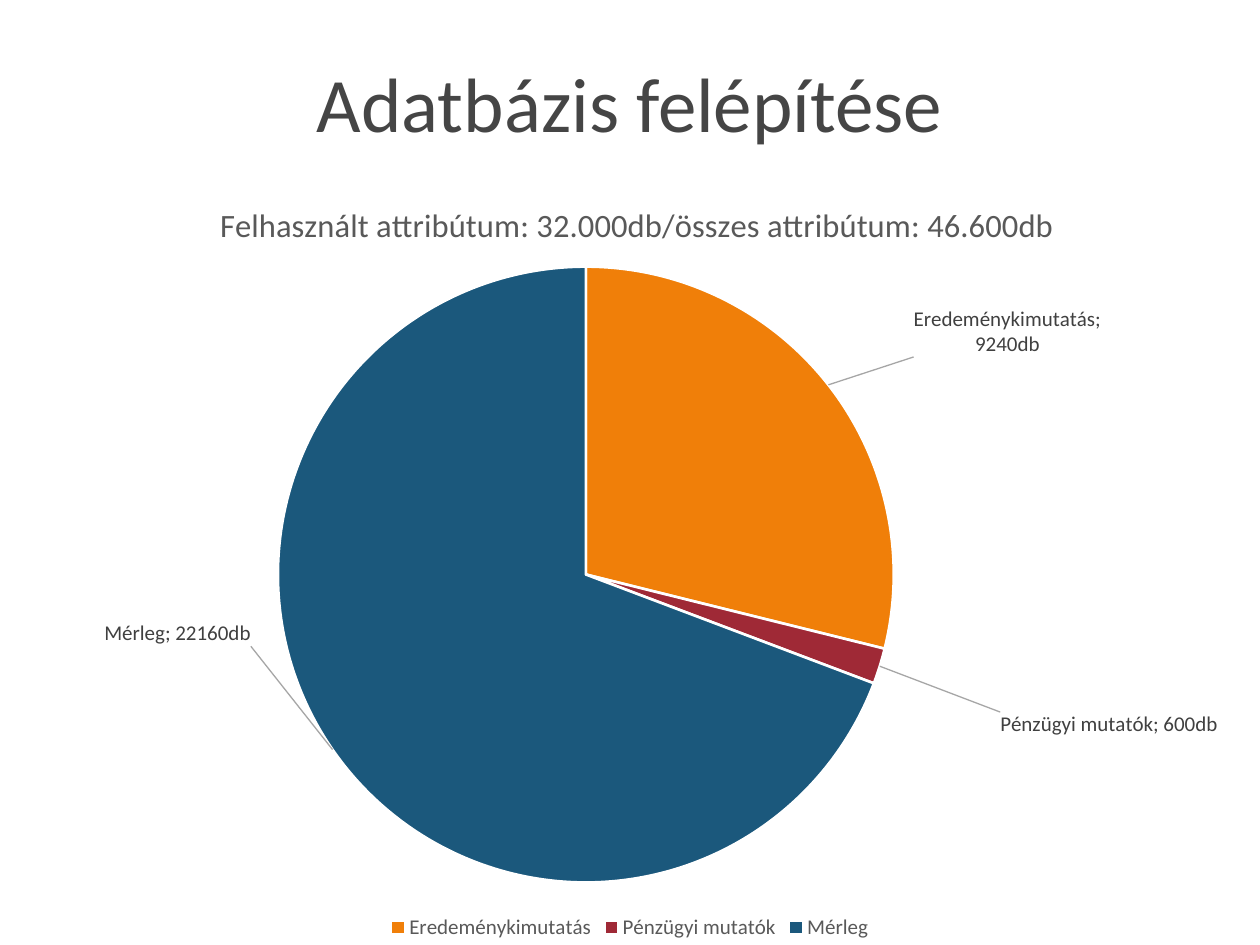
"""Build a slide with a titled pie chart of the database structure."""
from dataclasses import dataclass

import lxml.etree
import pptx
import pptx.chart.data
import pptx.dml.color
import pptx.enum.chart
import pptx.enum.text
import pptx.oxml
import pptx.oxml.ns
import pptx.util

qn = pptx.oxml.ns.qn


@dataclass(frozen=True)
class Theme:
    face: str = "Calibri"
    head: str = "454545"
    soft: str = "595959"
    label: str = "404040"
    line: str = "A6A6A6"
    edge: str = "FFFFFF"
    big: float = 44
    mid: float = 18.6
    small: float = 12


@dataclass(frozen=True)
class Slice:
    name: str
    count: int
    fill: str
    shift: tuple[float, float]


THEME = Theme()
WIDE, HIGH = pptx.util.Inches(10), pptx.util.Inches(7.5)
UNIT = '0"db"'
SLICES = [
    Slice("Eredeménykimutatás", 9240, "F07F09", (0.063, -0.03)),
    Slice("Pénzügyi mutatók", 600, "9F2936", (0.09, 0.056)),
    Slice("Mérleg", 22160, "1B587C", (-0.06, -0.17)),
]


def tint(code: str) -> pptx.dml.color.RGBColor:
    return pptx.dml.color.RGBColor.from_string(code)


def style(font, size: float, code: str) -> None:
    font.name, font.size, font.bold = THEME.face, pptx.util.Pt(size), False
    font.color.rgb = tint(code)


def box(x: float, y: float, w: float, h: float) -> tuple[int, ...]:
    return int(x * WIDE), int(y * HIGH), int(w * WIDE), int(h * HIGH)


def place(node, index: int, modes: dict[str, str], shares: dict[str, float]) -> None:
    for old in node.findall(qn("c:layout")):
        node.remove(old)
    layout = lxml.etree.Element(qn("c:layout"))
    manual = lxml.etree.SubElement(layout, qn("c:manualLayout"))
    for key, val in (modes | shares).items():
        lxml.etree.SubElement(manual, qn(f"c:{key}")).set("val", str(val))
    node.insert(index, layout)


def split(node) -> None:
    mark = lxml.etree.Element(qn("c:separator"))
    mark.text = "; "
    node.find(qn("c:showBubbleSize" if node.find(qn("c:showBubbleSize")) is not None
                 else "c:showPercent")).addnext(mark)


def paint(series, index: int, item: Slice) -> None:
    point = series.points[index]
    point.format.fill.solid()
    point.format.fill.fore_color.rgb = tint(item.fill)
    point.format.line.color.rgb = tint(THEME.edge)
    point.format.line.width = pptx.util.Pt(1.5)
    label = point.data_label
    style(label.font, THEME.small, THEME.label)
    label.position = pptx.enum.chart.XL_LABEL_POSITION.OUTSIDE_END
    node = series.data_labels._element.findall(qn("c:dLbl"))[index]
    node.find(qn("c:showCatName")).set("val", "1")
    place(node, 1, {}, dict(zip("xy", item.shift)))
    form = lxml.etree.Element(qn("c:numFmt"), formatCode=UNIT, sourceLinked="0")
    node.insert(2, form)
    split(node)


def tag(series) -> None:
    labels = series.data_labels
    style(labels.font, THEME.small, THEME.label)
    labels.number_format, labels.number_format_is_linked = UNIT, False
    labels.show_value = labels.show_category_name = True
    labels.position = pptx.enum.chart.XL_LABEL_POSITION.OUTSIDE_END
    node = labels._element
    split(node)
    for old in node.findall(qn("c:showLeaderLines")):
        node.remove(old)
    lxml.etree.SubElement(node, qn("c:showLeaderLines")).set("val", "1")
    lead = lxml.etree.SubElement(node, qn("c:leaderLines"))
    shape = lxml.etree.SubElement(lead, qn("c:spPr"))
    line = lxml.etree.SubElement(shape, qn("a:ln"), w="9525")
    fill = lxml.etree.SubElement(line, qn("a:solidFill"))
    lxml.etree.SubElement(fill, qn("a:srgbClr")).set("val", THEME.line)


def pie(slide) -> None:
    data = pptx.chart.data.CategoryChartData(number_format=UNIT)
    data.categories = [item.name for item in SLICES]
    data.add_series("Series 1", [item.count for item in SLICES])
    kind = pptx.enum.chart.XL_CHART_TYPE.PIE
    chart = slide.shapes.add_chart(kind, *box(0, 0.175, 1, 0.825), data).chart
    style(chart.font, THEME.small, THEME.soft)
    chart.plots[0].vary_by_categories = True

    chart.has_title = True
    text = chart.chart_title.text_frame.paragraphs[0]
    text.text = "Felhasznált attribútum: 32.000db/összes attribútum: 46.600db"
    style(text.runs[0].font, THEME.mid, THEME.soft)
    modes = {"xMode": "edge", "yMode": "edge"}
    place(chart.chart_title._element, 1, modes, {"x": 0.17, "y": 0.04})

    chart.has_legend = True
    chart.legend.position = pptx.enum.chart.XL_LEGEND_POSITION.BOTTOM
    chart.legend.include_in_layout = False
    style(chart.legend.font, THEME.small, THEME.soft)

    series = chart.plots[0].series[0]
    tag(series)
    for index, item in enumerate(SLICES):
        paint(series, index, item)
    area = chart._chartSpace.find(".//" + qn("c:plotArea"))
    place(area, 0, {"layoutTarget": "inner"} | modes,
          {"x": 0.22, "y": 0.13, "w": 0.49, "h": 0.79})


def head(slide) -> None:
    title = slide.shapes.title
    title.left, title.top, title.width, title.height = box(0.05, 0.04, 0.9, 0.135)
    frame = title.text_frame
    frame.text = "Adatbázis felépítése"
    frame.vertical_anchor = pptx.enum.text.MSO_ANCHOR.MIDDLE
    frame.paragraphs[0].alignment = pptx.enum.text.PP_ALIGN.CENTER
    style(frame.paragraphs[0].runs[0].font, THEME.big, THEME.head)


def main() -> None:
    deck = pptx.Presentation()
    deck.slide_width, deck.slide_height = WIDE, HIGH
    slide = deck.slides.add_slide(deck.slide_layouts[5])
    head(slide)
    pie(slide)
    deck.save("out.pptx")


if __name__ == "__main__":
    main()
